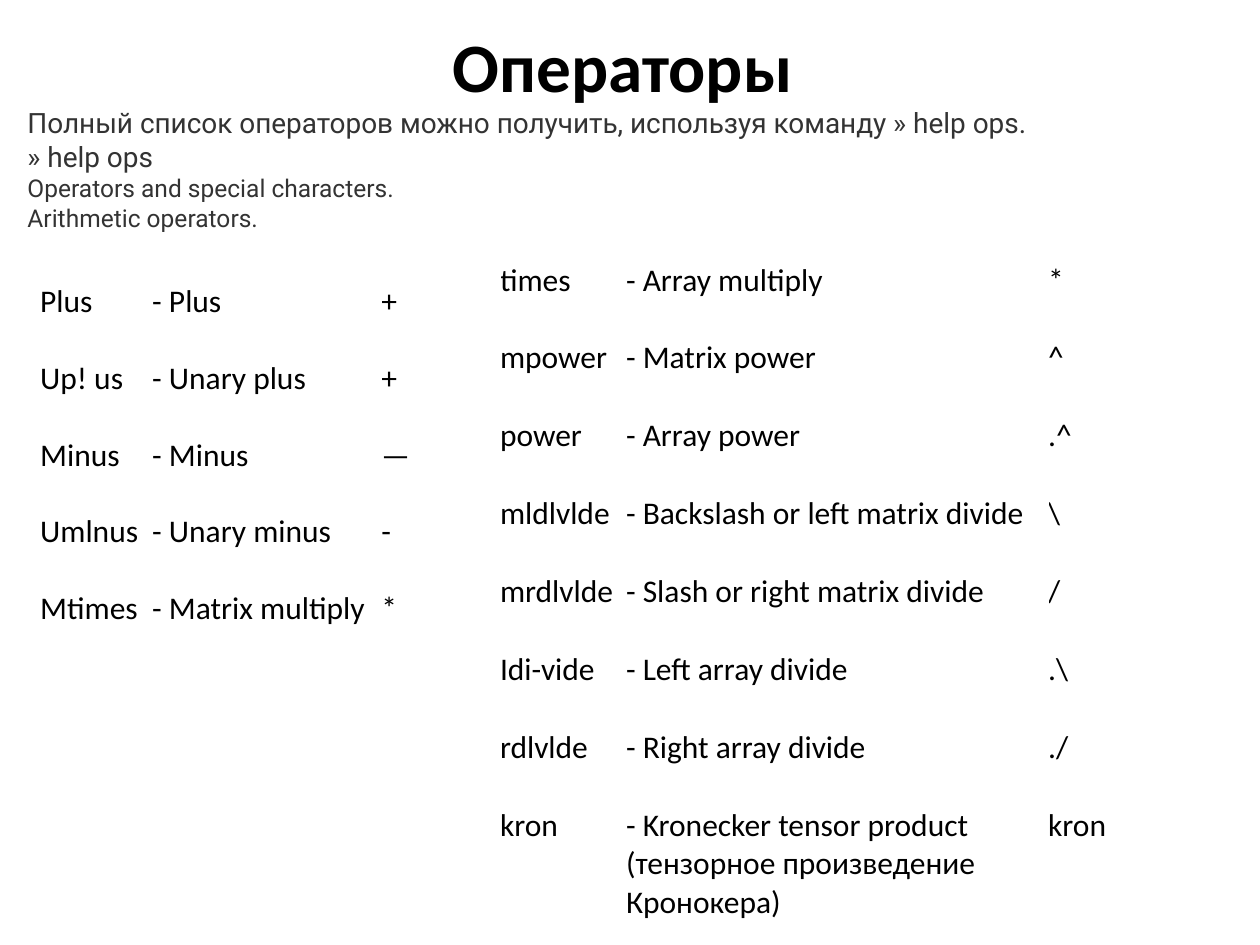
from dataclasses import dataclass

from lxml.etree import SubElement
from pptx import Presentation
from pptx.dml.color import RGBColor
from pptx.enum.text import MSO_ANCHOR, MSO_AUTO_SIZE, PP_ALIGN
from pptx.oxml.ns import qn
from pptx.util import Cm, Pt


@dataclass
class OperatorTable:
    left: float
    top: float
    columns: list[float]
    heights: list[float]
    operators: list[tuple[str, str, str]]
    fill: str | None = None


ARITHMETIC = OperatorTable(
    0.71, 4.93, [0.08, 2.26, 4.62, 0.94, 0.08], [0.76] + [1.55] * 5 + [0.64],
    [
        ("Plus", "- Plus", "+"),
        ("Up! us", "- Unary plus", "+"),
        ("Minus", "- Minus", "—"),
        ("Umlnus", "- Unary minus", "-"),
        ("Mtimes", "- Matrix multiply", "*"),
    ],
    fill="FFFFFF",
)
ARRAY = OperatorTable(
    9.93, 4.75, [0.15, 2.54, 8.51, 1.24, 0.86], [0.53, 1.55] + [1.57] * 6 + [2.74],
    [
        ("times", "- Array multiply", "*"),
        ("mpower", "- Matrix power", "^"),
        ("power", "- Array power", ".^"),
        ("mldlvlde", "- Backslash or left matrix divide", "\\"),
        ("mrdlvlde", "- Slash or right matrix divide", "/"),
        ("Idi-vide", "- Left array divide", ".\\"),
        ("rdlvlde", "- Right array divide", "./"),
        ("kron", "- Kronecker tensor product (тензорное произведение Кронокера)", "kron"),
    ],
)


def color(value: str) -> RGBColor:
    return RGBColor.from_string(value)


def write(para, text: str, *, size: float, font: str = "Calibri",
          ink: str = "000000", bold: bool = False, align=PP_ALIGN.LEFT) -> None:
    para.alignment = align
    para.space_before = Pt(0)
    for index, line in enumerate(text.split("\n")):
        if index:
            para.add_line_break()
        span = para.add_run()
        span.text = line
        span.font.size = Pt(size)
        span.font.name = font
        span.font.bold = bold
        span.font.color.rgb = color(ink)


def place(box, left: float, top: float, width: float, height: float) -> None:
    box.left, box.top, box.width, box.height = map(Cm, (left, top, width, height))


def remove_bullet(para) -> None:
    properties = para._p.get_or_add_pPr()
    properties.set("marL", "0")
    properties.set("indent", "0")
    SubElement(properties, qn("a:buNone"))


def format_cell(cell, text: str, fill: str | None) -> None:
    cell.margin_left = cell.margin_right = cell.margin_top = cell.margin_bottom = 0
    if fill:
        cell.fill.solid()
        cell.fill.fore_color.rgb = color(fill)
    else:
        cell.fill.background()
    para = cell.text_frame.paragraphs[0]
    if text:
        write(para, text, size=18)
    else:
        SubElement(para._p, qn("a:endParaRPr")).set("sz", "800")


def draw_table(page, data: OperatorTable) -> None:
    table = page.shapes.add_table(
        len(data.heights), len(data.columns), Cm(data.left), Cm(data.top),
        Cm(sum(data.columns)), Cm(sum(data.heights))).table
    table.first_row = table.horz_banding = False
    for column, width in zip(table.columns, data.columns):
        column.width = Cm(width)
    for row, height in zip(table.rows, data.heights):
        row.height = Cm(height)
    texts = {
        (row, column): text
        for row, operator in enumerate(data.operators, 1)
        for column, text in enumerate(operator, 1)
    }
    for row in range(len(data.heights)):
        for column in range(len(data.columns)):
            format_cell(table.cell(row, column), texts.get((row, column), ""), data.fill)


def main() -> None:
    """Build the slide that lists the operators."""
    deck = Presentation()
    deck.slide_width, deck.slide_height = Cm(25.4), Cm(19.05)
    page = deck.slides.add_slide(deck.slide_layouts[1])

    title, body = page.placeholders
    place(title, 0, 0.33, 25.1, 1.96)
    title.text_frame.vertical_anchor = MSO_ANCHOR.MIDDLE
    write(title.text_frame.paragraphs[0], "Операторы", size=39.6, bold=True,
          align=PP_ALIGN.CENTER)

    place(body, 0.3, 2.01, 24.79, 3.2)
    frame = body.text_frame
    frame.auto_size = MSO_AUTO_SIZE.NONE
    frame.vertical_anchor = MSO_ANCHOR.TOP
    intro = "Полный список операторов можно получить, используя команду » help ops.\n» help ops"
    headings = "Operators and special characters.\nArithmetic operators."
    for para, text, size in ((frame.paragraphs[0], intro, 16),
                             (frame.add_paragraph(), headings, 14)):
        write(para, text, size=size, font="Roboto", ink="333333")
        remove_bullet(para)

    for data in (ARITHMETIC, ARRAY):
        draw_table(page, data)
    deck.save("out.pptx")


if __name__ == "__main__":
    main()
